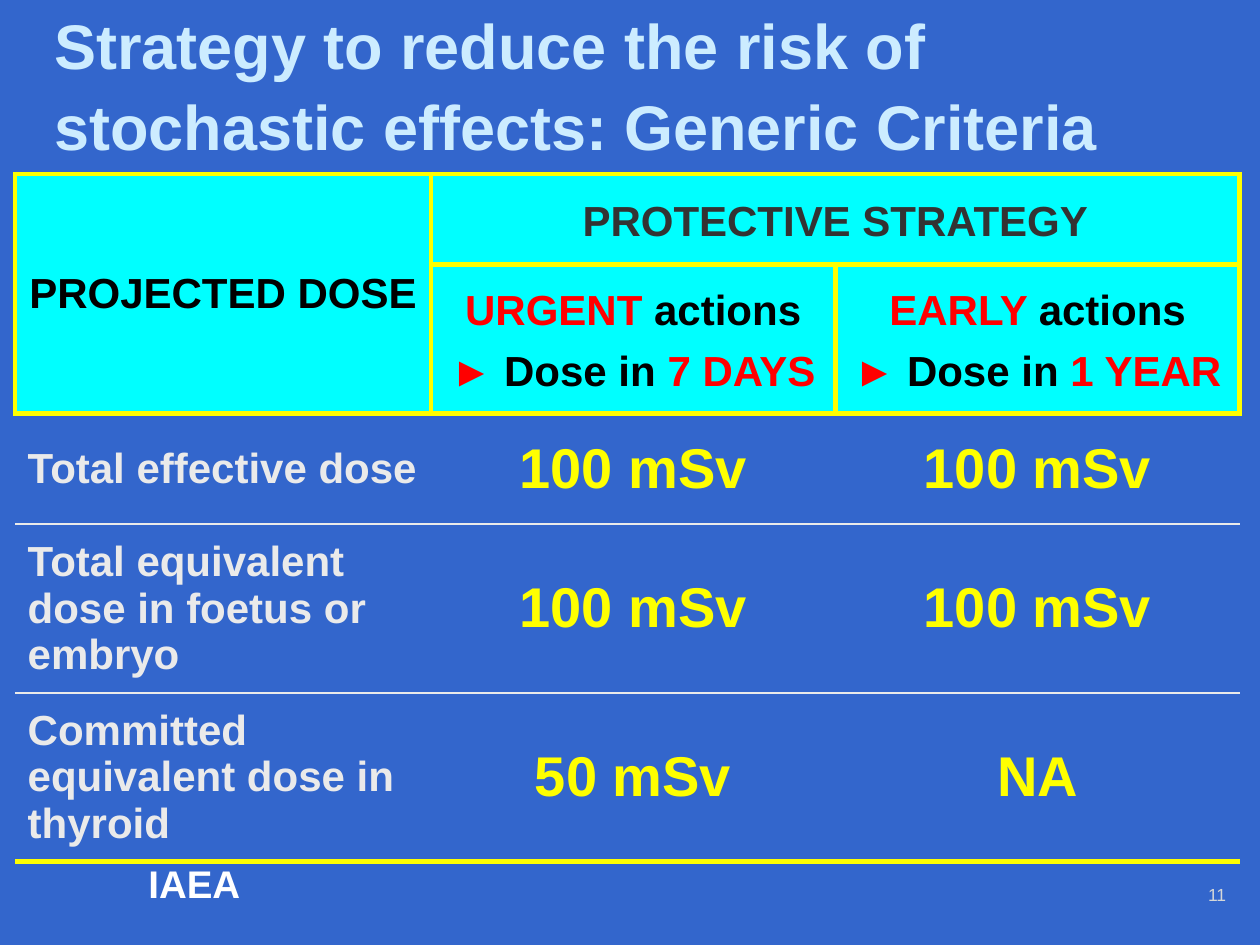
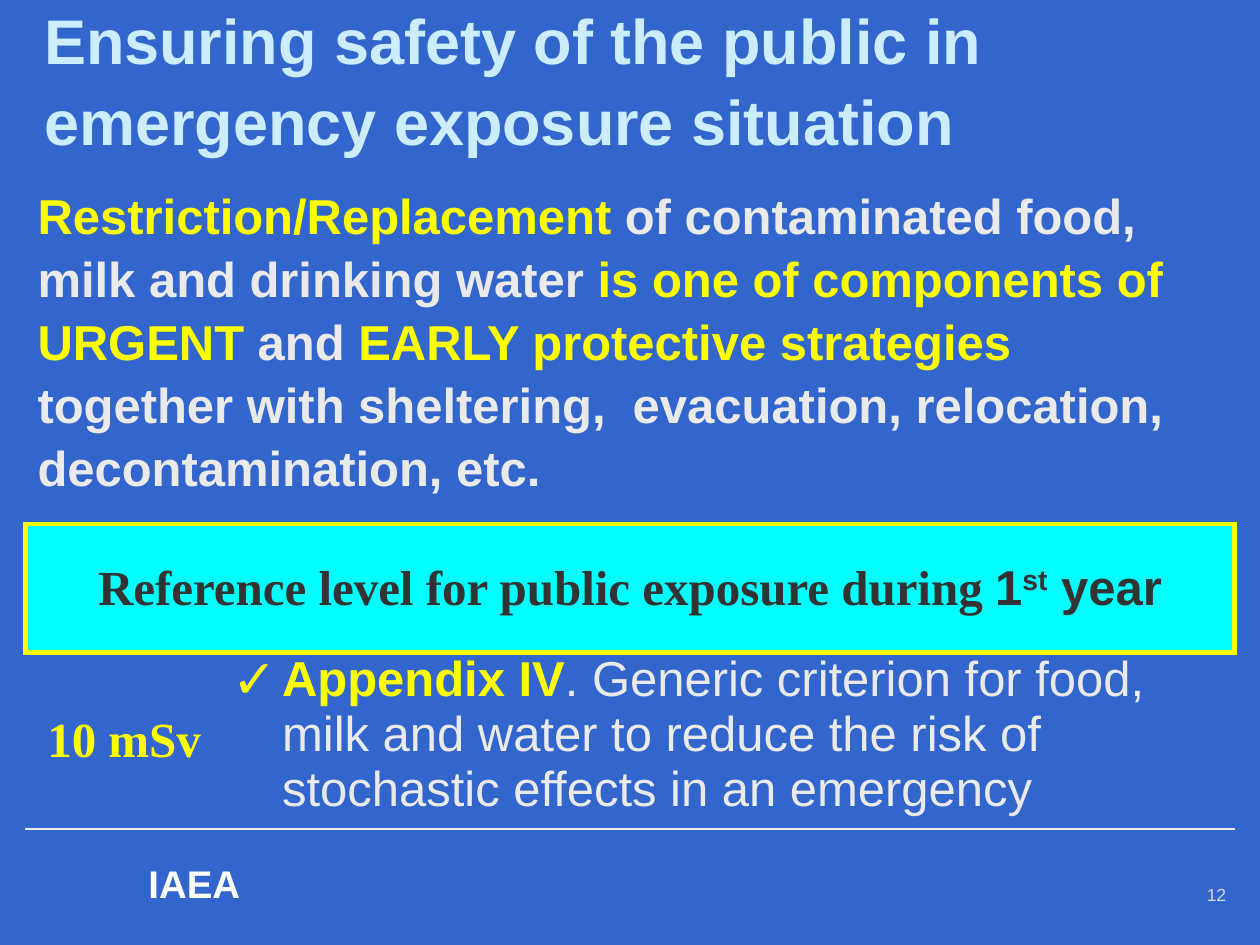
from lxml import etree
from pptx import Presentation
from pptx.dml.color import RGBColor
from pptx.enum.text import MSO_ANCHOR as Anchor, MSO_AUTO_SIZE as Auto, PP_ALIGN as Align
from pptx.oxml import parse_xml
from pptx.oxml.ns import qn
from pptx.util import Inches, Pt

rgb = RGBColor.from_string
YELLOW, CYAN, RED, PALE = "FFFF00", "00FFFF", "FF0000", "EAEAEA"
BLACK, DARK, WHITE, ICE, GREY = "000000", "333333", "FFFFFF", "CCECFF", "D5D7D8"
BLUE = "3366CC"
SERIF = "Times New Roman"
NS = 'xmlns:a="http://schemas.openxmlformats.org/drawingml/2006/main"'
PLAIN = "{2D5ABB26-0587-4C30-8999-92F81FD0307C}"

deck = Presentation()
deck.slide_width, deck.slide_height = Inches(10), Inches(7.5)
col, row = deck.slide_width / 100, deck.slide_height / 75
back = deck.slide_master.background.fill
back.solid()
back.fore_color.rgb = rgb(BLUE)


def area(x, y, w, h):
    """Turn grid columns and rows into left, top, width and height."""
    return int(x * col), int(y * row), int(w * col), int(h * row)


def write(frame, *paras, size=24, color=WHITE, font="Arial", bold=True,
          align=Align.LEFT, line=None, gap=None, after=None):
    """Fill a frame; each paragraph is a string or a list of (text, format) runs."""
    frame.word_wrap = True
    for n, runs in enumerate(paras):
        para = frame.paragraphs[0] if n == 0 else frame.add_paragraph()
        para.alignment = align
        para.line_spacing = line
        para.space_before = gap if n else Pt(0)
        para.space_after = after
        for text, form in [(runs, {})] if isinstance(runs, str) else runs:
            run = para.add_run()
            run.text = text
            face = run.font
            face.size = Pt(size)
            face.name = form.get("font", font)
            face.bold = form.get("bold", bold)
            face.color.rgb = rgb(form.get("color", color))
            if "base" in form:
                face._element.set("baseline", str(form["base"] * 1000))


# Title, footer and page number of each slide
heads = [
    ("Strategy to reduce the risk of stochastic effects: Generic Criteria",
     (3.3, 0, 94.2, 13.1)),
    ("Ensuring safety of the public in emergency exposure situation",
     (2.5, 2.1, 97.5, 8.1)),
]
pages = []
for num, (text, spot) in enumerate(heads, 11):
    page = deck.slides.add_slide(deck.slide_layouts[5])
    title = page.shapes.title
    title.left, title.top, title.width, title.height = area(*spot)
    frame = title.text_frame
    frame.auto_size = Auto.NONE
    frame.vertical_anchor = Anchor.MIDDLE
    write(frame, text, size=36, color=ICE, line=1.07)
    foot = page.shapes.add_textbox(*area(10.8, 67.8, 10, 4.7))
    write(foot.text_frame, "IAEA", size=22)
    mark = page.shapes.add_textbox(*area(92.7, 69.7, 5.6, 3.2))
    write(mark.text_frame, str(num), size=10, color=GREY, bold=False, align=Align.RIGHT)
    pages.append(page)
first, second = pages

# Both tables: frame, column widths, row heights, heading rows, bottom line
plans = [
    (first, (1.2, 13.8, 97.2, 54.6), (33, 32.1, 32.1),
     (7.2, 11.8, 8.8, 13.4, 13.4), 2, (YELLOW, 3)),
    (second, (2, 41.6, 96, 23.2), (15.7, 80.3), (10.2, 13), 1, (PALE, 1)),
]
grids = []
for page, spot, wide, high, top, base in plans:
    grid = page.shapes.add_table(len(high), len(wide), *area(*spot)).table
    grid.first_row = grid.horz_banding = False
    grid._tbl.tblPr.find(qn("a:tableStyleId")).text = PLAIN
    for part, w in zip(grid.columns, wide):
        part.width = int(w * col)
    for part, h in zip(grid.rows, high):
        part.height = int(h * row)
    for r in range(len(high)):
        for c in range(len(wide)):
            cell = grid.cell(r, c)
            cell.vertical_anchor = Anchor.MIDDLE
            if r < top:
                cell.fill.solid()
                cell.fill.fore_color.rgb = rgb(CYAN)
                edges = dict.fromkeys("LRTB", (YELLOW, 3))
            else:
                cell.fill.background()
                edges = {"T": (YELLOW, 3) if r == top else (PALE, 1),
                         "B": base if r == len(high) - 1 else (PALE, 1)}
            props = cell._tc.get_or_add_tcPr()
            for n, (side, (tint, thick)) in enumerate(edges.items()):
                props.insert(n, parse_xml(
                    f'<a:ln{side} {NS} w="{Pt(thick)}"><a:solidFill>'
                    f'<a:srgbClr val="{tint}"/></a:solidFill></a:ln{side}>'))
    grids.append(grid)
dose, level = grids

# Dose criteria
dose.cell(0, 0).merge(dose.cell(1, 0))
dose.cell(0, 1).merge(dose.cell(0, 2))
mid = {"align": Align.CENTER}
tall = {"line": Pt(30), "gap": Pt(4.8), **mid}
write(dose.cell(0, 0).text_frame, "PROJECTED DOSE", color=BLACK, **mid)
write(dose.cell(0, 1).text_frame, "PROTECTIVE STRATEGY", color=DARK, **tall)
red = {"color": RED}
for c, (kind, span) in enumerate([("URGENT ", "7 DAYS"), ("EARLY ", "1 YEAR")], 1):
    write(dose.cell(1, c).text_frame,
          [(kind, red), ("actions", {})],
          [("►", red), (" Dose in ", {}), (span, red)], color=BLACK, **tall)
rows = [
    ("Total effective dose", "100 mSv", "100 mSv"),
    ("Total equivalent dose in foetus or embryo", "100 mSv", "100 mSv"),
    ("Committed equivalent dose in thyroid", "50 mSv", "NA"),
]
for r, (name, *doses) in enumerate(rows, 2):
    write(dose.cell(r, 0).text_frame, name, color=PALE)
    for c, value in enumerate(doses, 1):
        write(dose.cell(r, c).text_frame, value, size=32, color=YELLOW, **mid)

# Reference level
level.cell(0, 0).merge(level.cell(0, 1))
for cell in level.iter_cells():
    cell.margin_left = cell.margin_right = Inches(0.07)
    cell.margin_top = cell.margin_bottom = 0
big = {"size": 28, "after": Pt(6)}
sans = {"font": "Arial"}
write(level.cell(0, 0).text_frame,
      [("Reference level for public exposure during ", {}), ("1", sans),
       ("st", {"base": 30, **sans}), (" year", sans)],
      color=DARK, font=SERIF, **big, **mid)
write(level.cell(1, 0).text_frame, "10 mSv", color=YELLOW, font=SERIF, **big, **mid)
note = level.cell(1, 1)
note.vertical_anchor = Anchor.TOP
write(note.text_frame,
      [("Appendix IV", {"color": YELLOW, "bold": True}),
       (". Generic criterion for food, milk and water to reduce the risk of "
        "stochastic effects in an emergency", {})],
      color=PALE, bold=False, **big)
props = note.text_frame.paragraphs[0]._p.get_or_add_pPr()
props.set("marL", str(Inches(0.4)))
props.set("indent", str(-Inches(0.4)))
tint = etree.SubElement(props, qn("a:buClr"))
etree.SubElement(tint, qn("a:srgbClr"), val=YELLOW)
etree.SubElement(props, qn("a:buSzPct"), val="110000")
etree.SubElement(props, qn("a:buFont"), typeface="Arial")
etree.SubElement(props, qn("a:buChar"), char="✓")

# Protective strategies
body = second.shapes.add_textbox(*area(2, 13.9, 93.7, 24.6))
pale = {"color": PALE}
write(body.text_frame,
      [("Restriction/Replacement", {}),
       (" of contaminated food, milk and drinking water ", pale),
       ("is one of components of URGENT", {}),
       (" and ", pale),
       ("EARLY protective strategies", {}),
       (" together with sheltering,  evacuation, relocation, decontamination, etc.", pale)],
      size=28, color=YELLOW, line=1.07)

deck.save("out.pptx")
